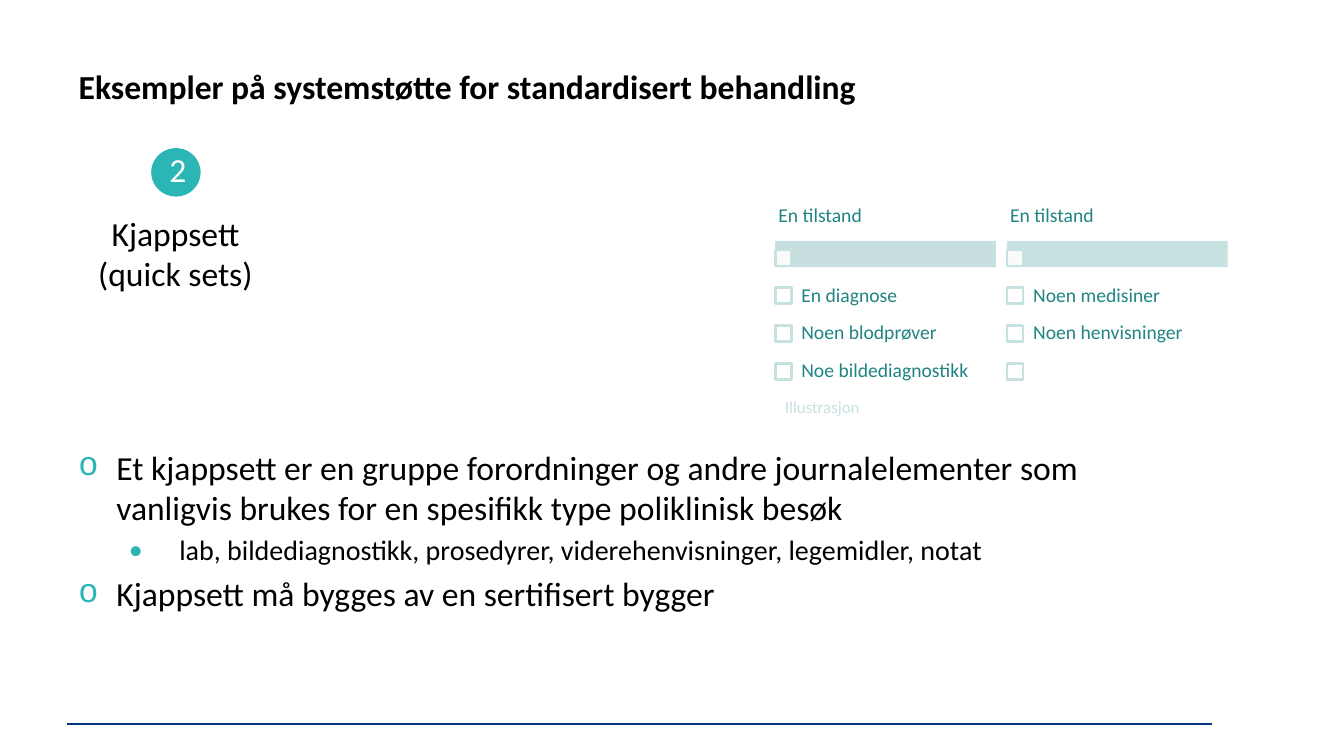
from dataclasses import dataclass

from lxml.etree import SubElement
from pptx import Presentation
from pptx.dml.color import RGBColor
from pptx.enum.shapes import MSO_CONNECTOR, MSO_SHAPE
from pptx.enum.text import MSO_ANCHOR, MSO_AUTO_SIZE, PP_ALIGN
from pptx.oxml.ns import qn
from pptx.shapes.autoshape import Shape
from pptx.slide import Slide
from pptx.text.text import _Paragraph as Para
from pptx.util import Pt


@dataclass(frozen=True)
class Theme:
    """Hold the colours, fonts and type sizes of the slide."""
    font: str = "Calibri"
    mark: str = "Courier New"
    ink: str = "000000"
    white: str = "FFFFFF"
    teal: str = "2CB5B5"
    deep: str = "208482"
    pale: str = "C7E0E0"
    navy: str = "043585"
    large: float = 24
    medium: float = 20
    small: float = 14
    tiny: float = 12


@dataclass(frozen=True)
class Area:
    """Give a place and size in points."""
    left: float
    top: float
    width: float
    height: float


@dataclass(frozen=True)
class Panel:
    """Describe one column of the order set."""
    left: float
    head: str
    items: tuple[str, ...]
    fill: str
    alpha: int


@dataclass(frozen=True)
class Point:
    """Describe one bullet paragraph."""
    text: str
    size: float
    mark: str
    font: str
    level: int
    left: float
    hang: float
    gap: float


LOOK = Theme()
BAR_TOP, BOX_TOP, PITCH, BOX = 172.1, 178.6, 27, 11.5
PANELS = (
    Panel(553.7, "En tilstand",
          ("En diagnose", "Noen blodprøver", "Noe bildediagnostikk"), LOOK.deep, 25),
    Panel(719.3, "En tilstand",
          ("Noen medisiner", "Noen henvisninger", ""), LOOK.pale, 100),
)
POINTS = (
    Point("Et kjappsett er en gruppe forordninger og andre journalelementer som "
          "vanligvis brukes for en spesifikk type poliklinisk besøk",
          LOOK.large, "o", LOOK.mark, 0, 27, 27, 0),
    Point("lab, bildediagnostikk, prosedyrer, viderehenvisninger, legemidler, notat",
          LOOK.medium, "•", LOOK.font, 1, 72, 36, 4),
    Point("Kjappsett må bygges av en sertifisert bygger",
          LOOK.large, "o", LOOK.mark, 0, 27, 27, 4.8),
)


def place(shape: Shape, area: Area) -> None:
    """Move and size a shape."""
    shape.left, shape.top = Pt(area.left), Pt(area.top)
    shape.width, shape.height = Pt(area.width), Pt(area.height)


def style(para: Para, size: float, color: str, bold: bool = False) -> None:
    """Set the font of a paragraph."""
    font = para.font
    font.name, font.size, font.bold = LOOK.font, Pt(size), bold
    font.color.rgb = RGBColor.from_string(color)


def block(slide: Slide, kind: MSO_SHAPE, area: Area, fill: str,
          alpha: int = 100, line: str = "") -> None:
    """Draw a filled preset shape."""
    shape = slide.shapes.add_shape(
        kind, Pt(area.left), Pt(area.top), Pt(area.width), Pt(area.height))
    shape.shadow.inherit = False
    shape.fill.solid()
    shape.fill.fore_color.rgb = RGBColor.from_string(fill)
    if alpha < 100:
        tint = shape.fill._xPr.find(qn("a:solidFill"))[0]
        SubElement(tint, qn("a:alpha"), val=str(alpha * 1000))
    if line:
        shape.line.color.rgb = RGBColor.from_string(line)
        shape.line.width = Pt(2)
    else:
        shape.line.fill.background()


def label(slide: Slide, text: str, area: Area, size: float, color: str,
          align: PP_ALIGN = PP_ALIGN.LEFT, anchor: MSO_ANCHOR = MSO_ANCHOR.TOP,
          pad: tuple[float, float] = (7.2, 3.6), space: float = 1) -> None:
    """Add a text box with one paragraph."""
    box = slide.shapes.add_textbox(0, 0, 0, 0)
    place(box, area)
    frame = box.text_frame
    frame.word_wrap, frame.vertical_anchor = True, anchor
    frame.margin_left = frame.margin_right = Pt(pad[0])
    frame.margin_top = frame.margin_bottom = Pt(pad[1])
    para = frame.paragraphs[0]
    para.text, para.alignment, para.line_spacing = text, align, space
    style(para, size, color)


def title(slide: Slide) -> None:
    """Fill and format the title placeholder."""
    shape = slide.shapes.title
    place(shape, Area(49, 43.2, 805, 36))
    frame = shape.text_frame
    frame.text = "Eksempler på systemstøtte for standardisert behandling"
    frame.word_wrap, frame.auto_size = True, MSO_AUTO_SIZE.NONE
    frame.vertical_anchor = MSO_ANCHOR.TOP
    frame.paragraphs[0].alignment = PP_ALIGN.LEFT
    style(frame.paragraphs[0], LOOK.large, LOOK.ink, True)


def badge(slide: Slide) -> None:
    """Draw the numbered topic."""
    block(slide, MSO_SHAPE.OVAL, Area(108, 105.8, 35.3, 34.6), LOOK.teal)
    label(slide, "2", Area(113.8, 103, 22.3, 36), LOOK.large, LOOK.white, PP_ALIGN.CENTER)
    label(slide, "Kjappsett (quick sets)", Area(43.2, 148.3, 164.2, 40.3),
          LOOK.large, LOOK.ink, PP_ALIGN.CENTER)


def column(slide: Slide, panel: Panel) -> None:
    """Draw one column of the order set."""
    left, mid = panel.left, MSO_ANCHOR.MIDDLE
    block(slide, MSO_SHAPE.RECTANGLE, Area(left, BAR_TOP, 157.7, 18.7),
          panel.fill, panel.alpha)
    block(slide, MSO_SHAPE.RECTANGLE, Area(left, BOX_TOP, BOX, BOX),
          LOOK.white, 90, LOOK.pale)
    label(slide, panel.head, Area(left, 138.2, 157.7, 33.1), LOOK.small, LOOK.deep,
          anchor=mid, pad=(2.2, 1.4), space=0.9)
    for row, item in enumerate(panel.items, 1):
        top = BOX_TOP + row * PITCH
        block(slide, MSO_SHAPE.RECTANGLE, Area(left, top, BOX, BOX),
              LOOK.white, line=LOOK.pale)
        if item:
            label(slide, item, Area(left + 10.8, top - 7.6, 146.9, 26.6),
                  LOOK.small, LOOK.deep, anchor=mid, pad=(7.9, 7.9), space=0.9)


def bullets(slide: Slide) -> None:
    """Write the bullet list."""
    box = slide.shapes.add_textbox(0, 0, 0, 0)
    place(box, Area(49, 315.4, 799.2, 175.7))
    frame = box.text_frame
    frame.word_wrap = True
    for rank, point in enumerate(POINTS):
        para = frame.add_paragraph() if rank else frame.paragraphs[0]
        para.text, para.level = point.text, point.level
        props = para._p.get_or_add_pPr()
        props.set("marL", str(Pt(point.left)))
        props.set("indent", str(-Pt(point.hang)))
        tint = SubElement(props, qn("a:buClr"))
        SubElement(tint, qn("a:srgbClr"), val=LOOK.teal)
        SubElement(props, qn("a:buFont"), typeface=point.font)
        SubElement(props, qn("a:buChar"), char=point.mark)
        if point.gap:
            para.space_before = Pt(point.gap)
        style(para, point.size, LOOK.ink)


def rule(slide: Slide) -> None:
    """Draw the line at the foot."""
    line = slide.shapes.add_connector(
        MSO_CONNECTOR.STRAIGHT, Pt(48.2), Pt(517), Pt(865.4), Pt(517))
    line.line.color.rgb = RGBColor.from_string(LOOK.navy)
    line.line.width = Pt(1.25)
    SubElement(line._element.spPr, qn("a:effectLst"))


def main() -> None:
    """Build and save the slide."""
    deck = Presentation()
    deck.slide_width, deck.slide_height = Pt(960), Pt(540)
    slide = deck.slides.add_slide(deck.slide_layouts[5])
    rule(slide)
    badge(slide)
    title(slide)
    bullets(slide)
    for panel in PANELS:
        column(slide, panel)
    label(slide, "Illustrasjon", Area(553.7, 280.1, 161.3, 21.6), LOOK.tiny, LOOK.pale)
    deck.save("out.pptx")


if __name__ == "__main__":
    main()
